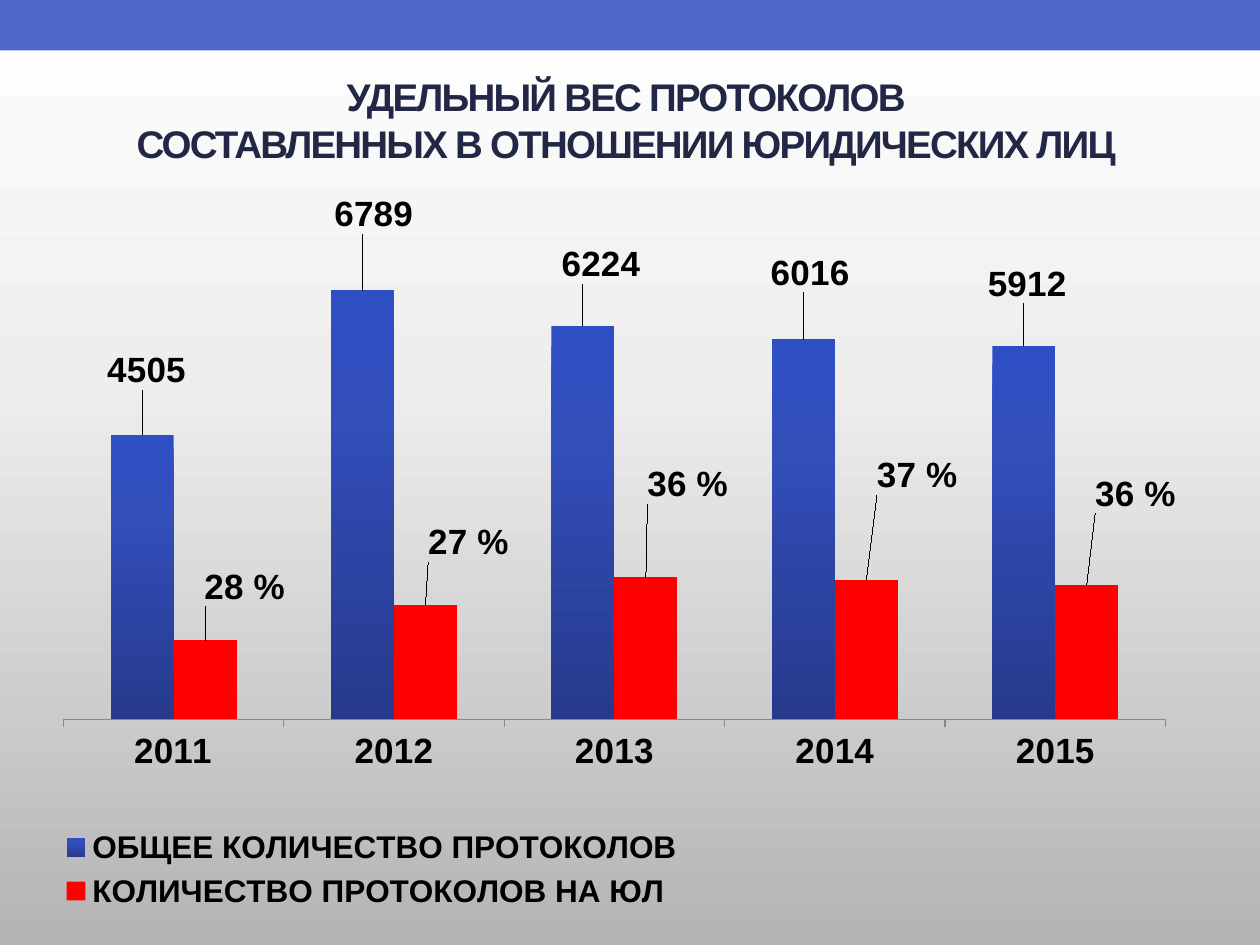
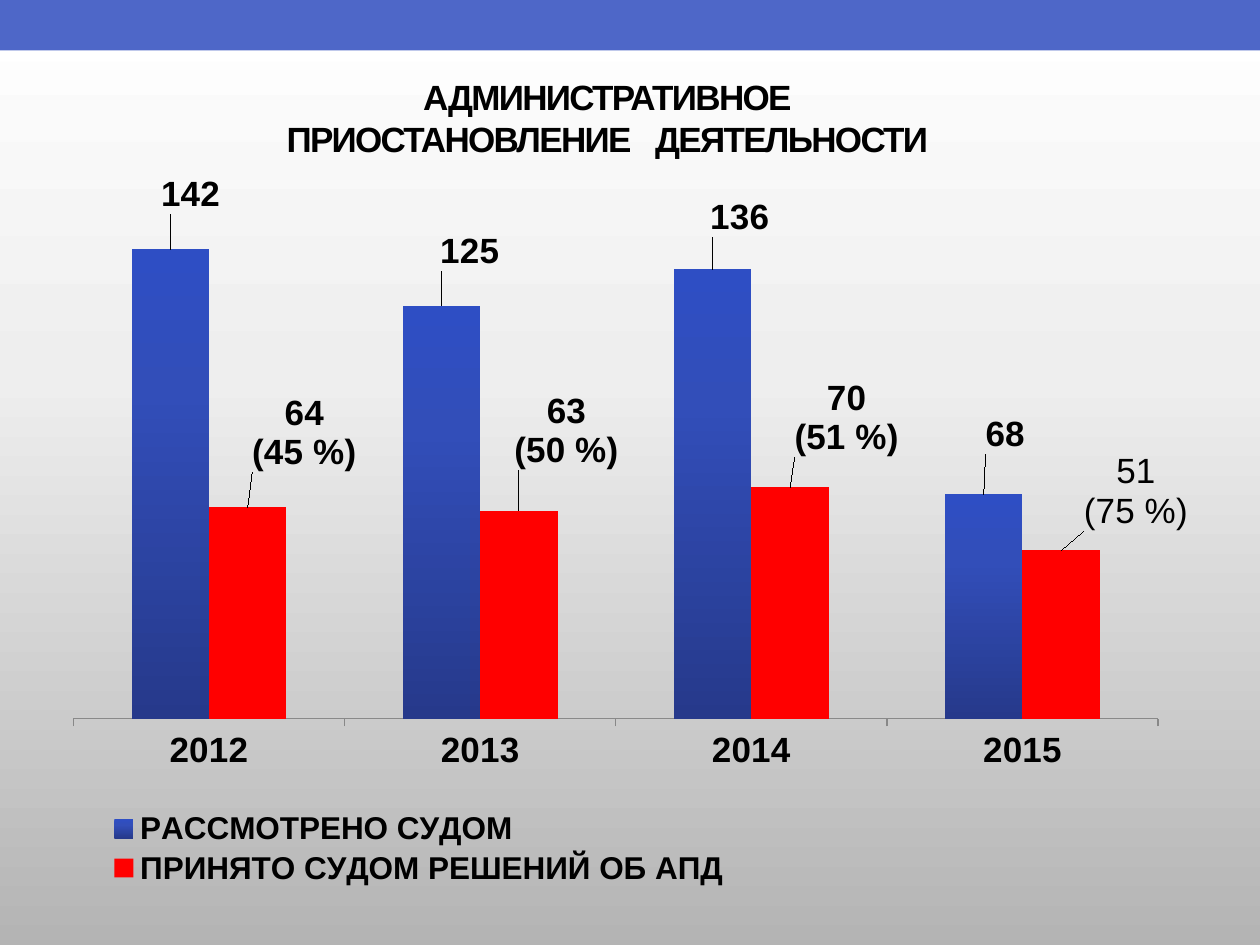
from copy import deepcopy

from lxml import etree
from pptx import Presentation
from pptx import util as u
from pptx.chart.data import CategoryChartData
from pptx.dml.color import RGBColor
from pptx.enum import chart as c
from pptx.enum import shapes, text
from pptx.oxml.ns import qn

FONT = "Arial"
WHITE = RGBColor(0xFF, 0xFF, 0xFF)
BLACK = RGBColor(0, 0, 0)
NAVY = RGBColor(0x21, 0x27, 0x45)
BAND_BLUE = RGBColor(0x4E, 0x67, 0xC8)
BAR_TOP = RGBColor(0x2E, 0x4E, 0xC4)
BAR_MIDDLE = RGBColor(0x32, 0x4E, 0xB9)
BAR_BOTTOM = RGBColor(0x26, 0x39, 0x8B)
RED = RGBColor(0xFF, 0, 0)
AXIS_GREY = RGBColor(0x88, 0x88, 0x88)
PALE_GREY = RGBColor(0xEE, 0xEE, 0xEE)
MID_GREY = RGBColor(0xB4, 0xB4, 0xB4)
TIGHT = -100
WIDE = 810


def set_gradient(fill, element, stops):
    fill.gradient()
    fill.gradient_angle = 270
    stop_list = element.find(".//" + qn("a:gsLst"))
    for _ in stops[2:]:
        stop_list.append(deepcopy(stop_list[-1]))
    for stop, (position, color) in zip(fill.gradient_stops, stops):
        stop.position = position
        stop.color.rgb = color


def style_font(font, size, color=BLACK, bold=True):
    font.name = FONT
    font.size = u.Pt(size)
    font.bold = bold
    font.color.rgb = color


def add_band(slide, top, height, color):
    band = slide.shapes.add_shape(
        shapes.MSO_SHAPE.RECTANGLE, 0, u.Inches(top), u.Inches(10), u.Inches(height))
    band.shadow.inherit = False
    band.fill.solid()
    band.fill.fore_color.rgb = color
    band.line.fill.background()


def add_base_slide(presentation):
    slide = presentation.slides.add_slide(presentation.slide_layouts[6])
    set_gradient(slide.background.fill, slide.element,
                 [(0, WHITE), (0.4, PALE_GREY), (1, MID_GREY)])
    add_band(slide, 0.24, 0.25, WHITE)
    add_band(slide, 0, 0.4, BAND_BLUE)
    return slide


def add_title(slide, left, top, lines, size, color):
    box = slide.shapes.add_textbox(
        u.Inches(left), u.Inches(top), u.Inches(9), u.Inches(0.8))
    frame = box.text_frame
    frame.word_wrap = True
    frame.vertical_anchor = text.MSO_ANCHOR.MIDDLE
    for index, line in enumerate(lines):
        paragraph = frame.add_paragraph() if index else frame.paragraphs[0]
        paragraph.alignment = text.PP_ALIGN.CENTER
        for words, spacing in line:
            run = paragraph.add_run()
            run.text = words
            style_font(run.font, size, color)
            run.font._element.set("spc", str(spacing))


def make_layout(x, y, width=None, height=None, inner=False):
    layout = etree.Element(qn("c:layout"))
    manual = etree.SubElement(layout, qn("c:manualLayout"))
    settings = [("x", x), ("y", y)]
    if width is not None:
        settings = [("xMode", "edge"), ("yMode", "edge"), *settings,
                    ("w", width), ("h", height)]
    if inner:
        settings.insert(0, ("layoutTarget", "inner"))
    for name, value in settings:
        etree.SubElement(manual, qn("c:" + name)).set("val", str(value))
    return layout


def label_points(series, labels):
    series.data_labels.show_value = True
    style_font(series.data_labels.font, 20)
    for index, (words, x, y, bold) in enumerate(labels):
        label = series.points[index].data_label
        if words:
            label.text_frame.text = words
            for paragraph in label.text_frame.paragraphs:
                for run in paragraph.runs:
                    style_font(run.font, 20, bold=bold)
        else:
            style_font(label.font, 20, bold=bold)
        label.position = c.XL_LABEL_POSITION.OUTSIDE_END
    for element, (_, x, y, _) in zip(series._element.iter(qn("c:dLbl")), labels):
        element.insert(1, make_layout(x, y))


def add_legend(chart, layout):
    chart.has_legend = True
    legend = chart.legend
    legend.position = c.XL_LEGEND_POSITION.RIGHT
    legend.include_in_layout = False
    style_font(legend.font, 18)
    for old in legend._element.findall(qn("c:layout")):
        legend._element.remove(old)
    legend._element.find(qn("c:legendPos")).addnext(layout)


def add_column_chart(slide, place, years, series_rows, maximum, plot_area, legend_area):
    data = CategoryChartData()
    data.categories = years
    for name, values, _ in series_rows:
        data.add_series(name, values)
    chart = slide.shapes.add_chart(
        c.XL_CHART_TYPE.COLUMN_CLUSTERED, *map(u.Inches, place), data).chart
    chart.has_title = False
    style_font(chart.font, 18, bold=False)

    value_axis = chart.value_axis
    value_axis.minimum_scale = 0
    value_axis.maximum_scale = maximum
    value_axis.has_major_gridlines = False
    value_axis.visible = False
    category_axis = chart.category_axis
    category_axis.major_tick_mark = c.XL_TICK_MARK.OUTSIDE
    category_axis.format.line.color.rgb = AXIS_GREY
    style_font(category_axis.tick_labels.font, 20)

    plot = chart.plots[0]
    plot.gap_width = 150
    plot.overlap = 0
    plot.vary_by_categories = False
    total, share = plot.series
    set_gradient(total.format.fill, total._element,
                 [(0, BAR_TOP), (0.3, BAR_MIDDLE), (1, BAR_BOTTOM)])
    share.format.fill.solid()
    share.format.fill.fore_color.rgb = RED
    for series, (_, _, labels) in zip(plot.series, series_rows):
        label_points(series, labels)

    plot_element = chart._chartSpace.find(".//" + qn("c:plotArea"))
    for old in plot_element.findall(qn("c:layout")):
        plot_element.remove(old)
    plot_element.insert(0, make_layout(*plot_area, inner=True))
    add_legend(chart, make_layout(*legend_area))


def build_protocols(presentation):
    slide = add_base_slide(presentation)
    add_title(slide, 0.47, 0.55, [
        [("УДЕЛЬНЫЙ ВЕС ПРОТОКОЛОВ", TIGHT)],
        [("СОСТАВЛЕННЫХ В ОТНОШЕНИИ ЮРИДИЧЕСКИХ ЛИЦ", TIGHT)],
    ], 22, NAVY)
    add_column_chart(
        slide, (0.35, 1.55, 9, 5.75), ["2011", "2012", "2013", "2014", "2015"],
        [("ОБЩЕЕ КОЛИЧЕСТВО ПРОТОКОЛОВ", [4505, 6789, 6224, 6016, 5912],
          [(None, 0.004, -0.054, True), (None, 0.01, -0.07, True),
           (None, 0.016, -0.051, True), (None, 0.006, -0.057, True),
           (None, 0.003, -0.051, True)]),
         ("КОЛИЧЕСТВО ПРОТОКОЛОВ НА ЮЛ", [1256, 1815, 2251, 2212, 2132],
          [("28 %", 0.035, -0.039, True), ("27 %", 0.038, -0.052, True),
           ("36 %", 0.037, -0.094, True), ("37 %", 0.045, -0.11, True),
           ("36 %", 0.043, -0.091, True)])],
        8000, (0.017, 0.023, 0.972, 0.7), (0.014, 0.864, 0.55, 0.132))


def build_suspensions(presentation):
    slide = add_base_slide(presentation)
    add_title(slide, 0.32, 0.53, [
        [("АДМИНИСТРАТИВНОЕ", TIGHT)],
        [("ПРИОСТАНОВЛЕНИЕ", TIGHT), (" ", WIDE), ("ДЕЯТЕЛЬНОСТИ", TIGHT)],
    ], 20, BLACK)
    add_column_chart(
        slide, (0.43, 1.39, 9, 5.67), ["2012", "2013", "2014", "2015"],
        [("РАССМОТРЕНО СУДОМ", [142, 125, 136, 68],
          [(None, 0.018, -0.042, True), (None, 0.025, -0.041, True),
           (None, 0.024, -0.038, True), (None, 0.019, -0.048, True)]),
         ("ПРИНЯТО СУДОМ РЕШЕНИЙ ОБ АПД", [64, 63, 70, 51],
          [("64\n(45 %)", 0.05, -0.042, True), ("63\n(50 %)", 0.042, -0.049, True),
           ("70\n(51 %)", 0.05, -0.035, True), ("51\n(75 %)", 0.066, -0.02, False)])],
        160, (0.017, 0.02, 0.958, 0.741), (0.047, 0.885, 0.55, 0.115))


def main():
    presentation = Presentation()
    presentation.slide_width = u.Inches(10)
    presentation.slide_height = u.Inches(7.5)
    build_protocols(presentation)
    build_suspensions(presentation)
    presentation.save("out.pptx")


if __name__ == "__main__":
    main()
